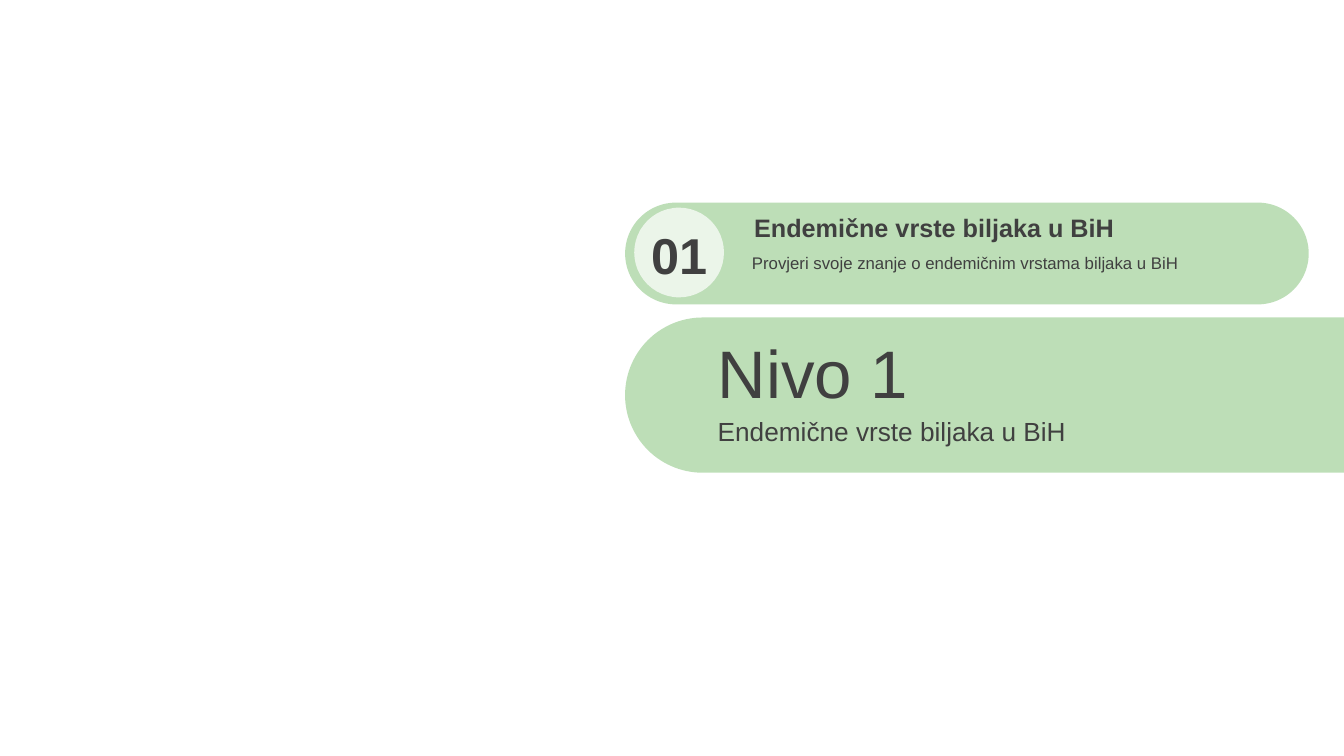
import math
import pptx
import pptx.util
import pptx.dml.color
import pptx.enum.shapes
import pptx.enum.text
import pptx.oxml.ns
import lxml.etree

Inches = pptx.util.Inches
SHAPES = pptx.enum.shapes.MSO_SHAPE
ANCHOR = pptx.enum.text.MSO_ANCHOR
ALIGN = pptx.enum.text.PP_ALIGN
GREEN = pptx.dml.color.RGBColor(0x5A, 0xAE, 0x4C)
WHITE = pptx.dml.color.RGBColor(0xFF, 0xFF, 0xFF)
DARK_GRAY = pptx.dml.color.RGBColor(0x40, 0x40, 0x40)


def paint(shape, color, opacity):
    shape.shadow.inherit = False
    shape.line.fill.background()
    shape.fill.solid()
    shape.fill.fore_color.rgb = color
    color_element = shape.fill._xPr.find(".//" + pptx.oxml.ns.qn("a:srgbClr"))
    alpha = lxml.etree.SubElement(color_element, pptx.oxml.ns.qn("a:alpha"))
    alpha.set("val", str(opacity * 1000))


def add_text(text, box, size, bold=False, anchor=ANCHOR.TOP, align=ALIGN.LEFT, side_inset=0.1):
    frame = slide.shapes.add_textbox(*map(Inches, box)).text_frame
    frame.word_wrap = True
    frame.auto_size = pptx.enum.text.MSO_AUTO_SIZE.SHAPE_TO_FIT_TEXT
    frame.vertical_anchor = anchor
    frame.margin_left = frame.margin_right = Inches(side_inset)
    paragraph = frame.paragraphs[0]
    paragraph.alignment = align
    run = paragraph.add_run()
    run.text = text
    run.font.name = "Arial"
    run.font.size = pptx.util.Pt(size)
    run.font.bold = bold
    run.font.color.rgb = DARK_GRAY


presentation = pptx.Presentation()
presentation.slide_width = Inches(13.33)
presentation.slide_height = Inches(7.5)
slide = presentation.slides.add_slide(presentation.slide_layouts[6])

band_left, band_top, band_right, radius = 6.2, 3.15, 13.33, 0.77
center_x, center_y = band_left + radius, band_top + radius
outline = [(band_right, band_top), (band_right, band_top + 2 * radius)]
for degrees in range(90, 271, 3):
    angle = math.radians(degrees)
    outline.append((center_x + radius * math.cos(angle), center_y + radius * math.sin(angle)))
points = [(Inches(x), Inches(y)) for x, y in outline]
builder = slide.shapes.build_freeform(*points[0])
builder.add_line_segments(points[1:], close=True)
paint(builder.convert_to_shape(), GREEN, 40)

add_text("Nivo 1", (7.02, 3.23, 5.96, 0.91), 48, anchor=ANCHOR.MIDDLE)
add_text("Endemične vrste biljaka u BiH", (7.02, 4.07, 5.96, 0.42), 18.7, anchor=ANCHOR.MIDDLE)

pill = slide.shapes.add_shape(
    SHAPES.ROUNDED_RECTANGLE, Inches(6.2), Inches(2.01), Inches(6.78), Inches(1.01))
pill.adjustments[0] = 0.5
paint(pill, GREEN, 40)
number_circle = slide.shapes.add_shape(
    SHAPES.OVAL, Inches(6.29), Inches(2.06), Inches(0.89), Inches(0.89))
paint(number_circle, WHITE, 70)

add_text("Provjeri svoje znanje o endemičnim vrstama biljaka u BiH", (7.36, 2.46, 5.1, 0.3), 12)
add_text("Endemične vrste biljaka u BiH", (7.36, 2.06, 5.1, 0.4), 18, bold=True, side_inset=0.12)
add_text("01", (6.2, 2.17, 1.07, 0.71), 36, bold=True,
         anchor=ANCHOR.MIDDLE, align=ALIGN.CENTER, side_inset=0.12)

presentation.save("out.pptx")
